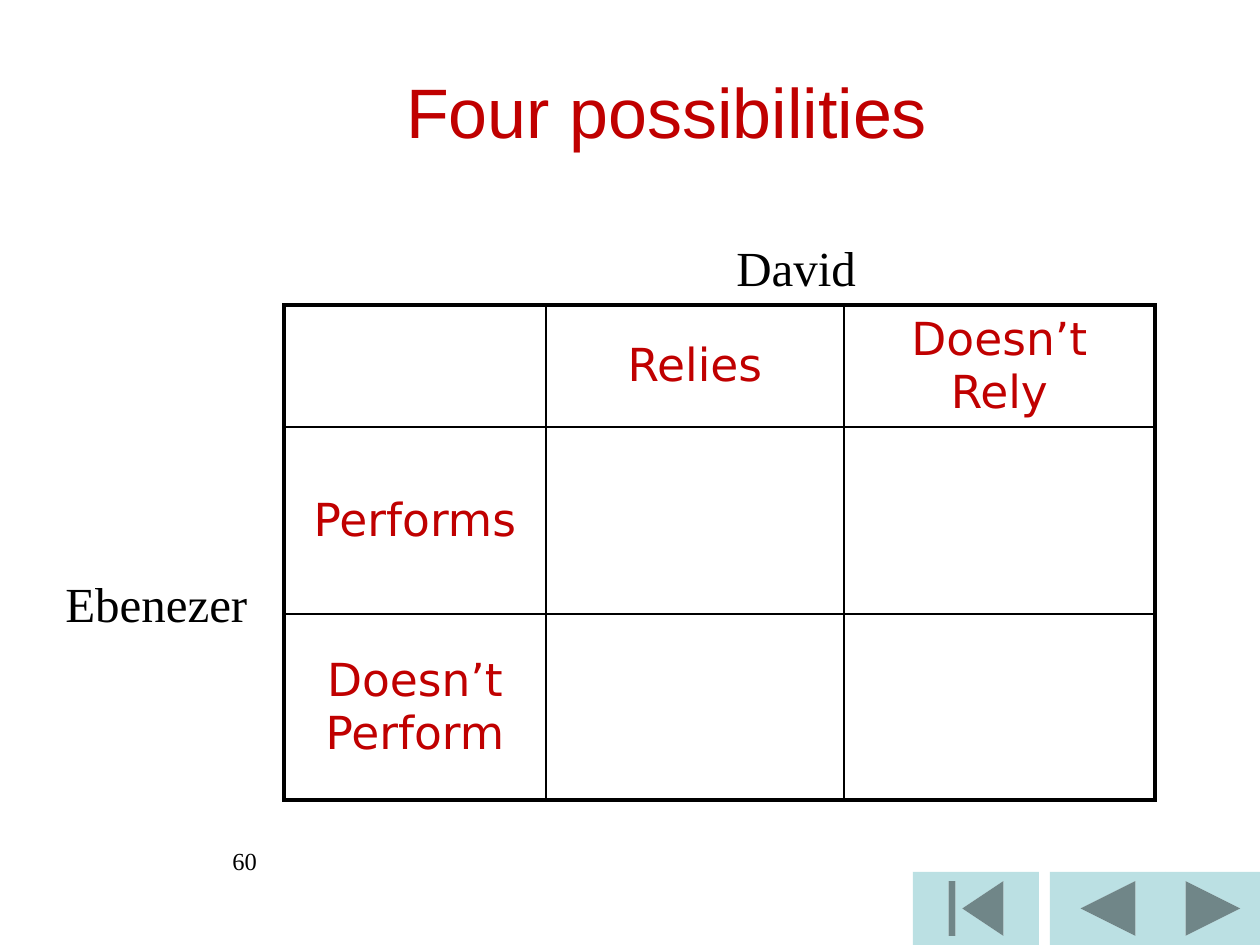
from lxml import etree
from pptx import Presentation
from pptx import util as u
from pptx.dml.color import RGBColor
from pptx.enum import shapes, text
from pptx.oxml import ns

PX = 914400 / 126
RED = RGBColor(0xC0, 0x00, 0x00)
BLACK = RGBColor(0x00, 0x00, 0x00)
TEAL = RGBColor(0xBB, 0xE0, 0xE3)
SERIF = "Times New Roman"

COLS = [262, 298, 311]
ROWS = [122, 187, 186]
CELLS = [
    ["", "Relies", "Doesn’t Rely"],
    ["Performs", "", ""],
    ["Doesn’t Perform", "", ""],
]
THICK, THIN = 2.25, 1


def px(n):
    return u.Emu(round(n * PX))


def write(frame, words, size=28, font=SERIF, color=BLACK,
          align=text.PP_ALIGN.LEFT):
    para = frame.paragraphs[0]
    para.alignment = align
    run = para.add_run()
    run.text = words
    run.font.size = u.Pt(size)
    run.font.name = font
    run.font.color.rgb = color


def add_label(slide, words, x, y, w, h, **style):
    frame = slide.shapes.add_textbox(px(x), px(y), px(w), px(h)).text_frame
    frame.word_wrap = True
    write(frame, words, **style)


def add_button(slide, kind, x, w):
    button = slide.shapes.add_shape(kind, px(x), px(872), px(w), px(73))
    button.shadow.inherit = False
    button.fill.solid()
    button.fill.fore_color.rgb = TEAL
    button.line.fill.background()


def set_edges(cell, widths):
    props = cell._tc.get_or_add_tcPr()
    for i, (side, width) in enumerate(widths.items()):
        line = etree.Element(ns.qn("a:ln" + side), w=str(u.Pt(width)))
        fill = etree.SubElement(line, ns.qn("a:solidFill"))
        etree.SubElement(fill, ns.qn("a:srgbClr"), val=str(BLACK))
        props.insert(i, line)


def add_grid(slide):
    frame = slide.shapes.add_table(len(ROWS), len(COLS), px(284), px(305),
                                   px(sum(COLS)), px(sum(ROWS)))
    grid = frame.table
    grid.first_row = grid.horz_banding = False
    for col, w in zip(grid.columns, COLS):
        col.width = px(w)
    for row, h in zip(grid.rows, ROWS):
        row.height = px(h)

    # Thick outer frame, thin inner lines
    for r, line in enumerate(CELLS):
        for c, words in enumerate(line):
            cell = grid.cell(r, c)
            cell.fill.background()
            cell.vertical_anchor = text.MSO_ANCHOR.MIDDLE
            set_edges(cell, {
                "L": THICK if c == 0 else THIN,
                "R": THICK if c == len(COLS) - 1 else THIN,
                "T": THICK if r == 0 else THIN,
                "B": THICK if r == len(ROWS) - 1 else THIN,
            })
            if words:
                write(cell.text_frame, words, size=26, font="DejaVu Sans",
                      color=RED, align=text.PP_ALIGN.CENTER)


def add_title(slide, words):
    title = slide.shapes.title
    title.left, title.top = px(73), px(32)
    title.width, title.height = px(1187), px(157)
    title.text_frame.vertical_anchor = text.MSO_ANCHOR.MIDDLE
    write(title.text_frame, words, size=40, font="Arial", color=RED,
          align=text.PP_ALIGN.CENTER)


def main():
    deck = Presentation()
    deck.slide_width, deck.slide_height = px(1260), px(945)
    slide = deck.slides.add_slide(deck.slide_layouts[5])

    # Navigation buttons
    kinds = shapes.MSO_SHAPE
    add_button(slide, kinds.ACTION_BUTTON_BACK_OR_PREVIOUS, 1050, 116)
    add_button(slide, kinds.ACTION_BUTTON_BEGINNING, 913, 126)
    add_button(slide, kinds.ACTION_BUTTON_FORWARD_OR_NEXT, 1166, 94)

    # Title, page number and table
    add_label(slide, "60", 220, 840, 766, 66, size=14)
    add_title(slide, "Four possibilities")
    add_grid(slide)

    # Names of the two players
    add_label(slide, "David", 724, 231, 217, 72)
    add_label(slide, "Ebenezer", 53, 567, 231, 73)

    deck.save("out.pptx")


if __name__ == "__main__":
    main()
